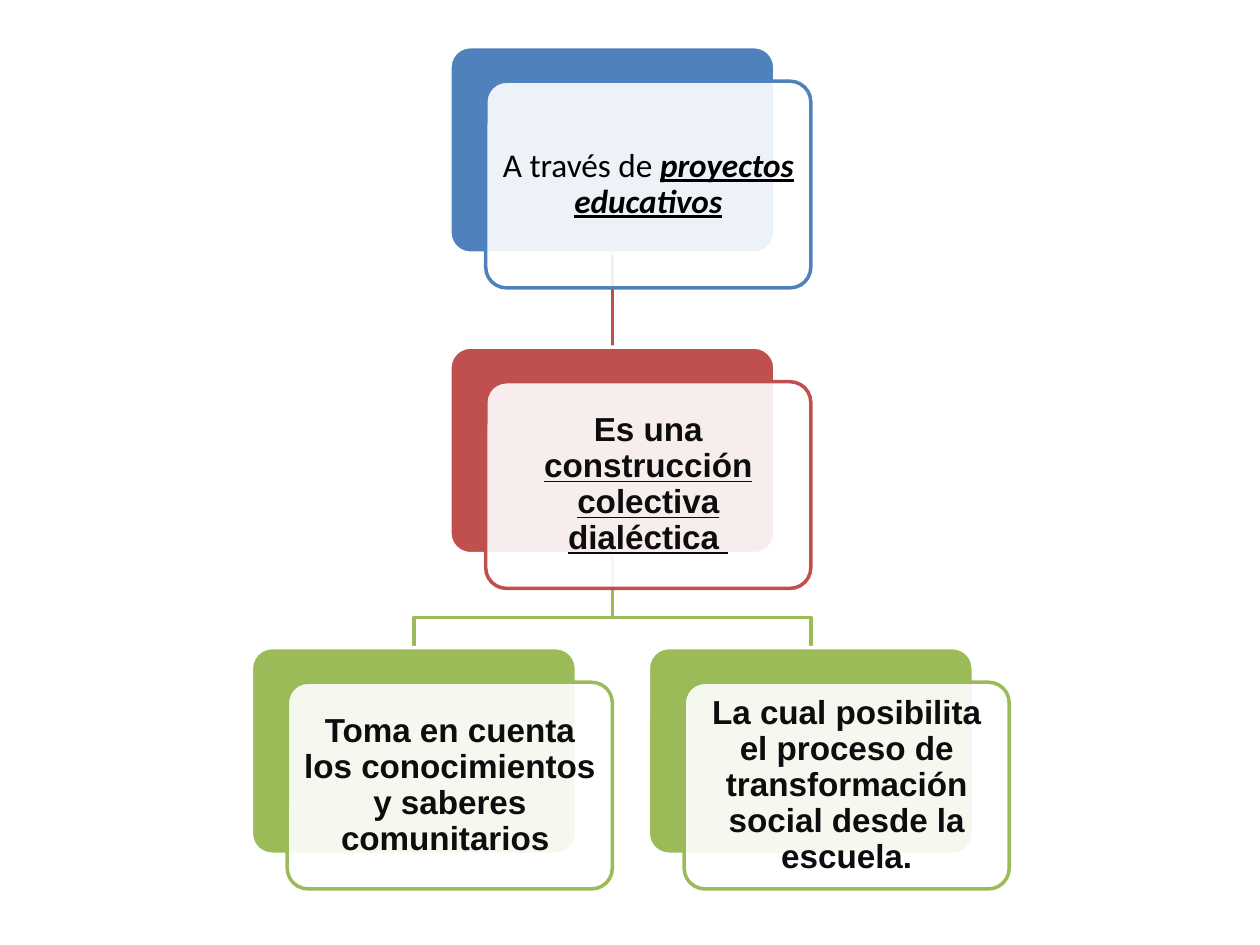
from lxml import etree
from pptx import Presentation, util as u
from pptx.dml.color import RGBColor
from pptx.enum import shapes, text
from pptx.oxml.ns import qn

BLUE = RGBColor(0x4F, 0x81, 0xBD)
RED = RGBColor(0xC0, 0x50, 0x4D)
GREEN = RGBColor(0x9B, 0xBB, 0x59)
WHITE = RGBColor(0xFF, 0xFF, 0xFF)
BLACK = RGBColor(0, 0, 0)
INK = RGBColor(0x0D, 0x0D, 0x0D)

CARD_W, CARD_H = 2.58, 1.64
COLUMN_STEP, ROW_STEP = 1.575, 2.385
LEFT, TOP = 1.995, 0.37
FRONT_DX, FRONT_DY = 0.285, 0.275
TEXT_MARGIN = 0.05
LINE_WIDTH = u.Pt(2)


def card_origin(column, row):
    return LEFT + column * COLUMN_STEP, TOP + row * ROW_STEP


def top_center(column, row):
    x, y = card_origin(column, row)
    return x + CARD_W / 2, y


def bottom_center(column, row):
    x, y = top_center(column, row)
    return x, y + CARD_H


def add_panel(slide, x, y, fill, line, opacity=100):
    panel = slide.shapes.add_shape(
        shapes.MSO_SHAPE.ROUNDED_RECTANGLE,
        u.Inches(x), u.Inches(y), u.Inches(CARD_W), u.Inches(CARD_H))
    panel.adjustments[0] = 0.1
    panel.shadow.inherit = False
    panel.fill.solid()
    panel.fill.fore_color.rgb = fill
    panel.line.color.rgb = line
    panel.line.width = LINE_WIDTH
    if opacity < 100:
        color = panel.fill._xPr.find(qn("a:solidFill"))[0]
        etree.SubElement(color, qn("a:alpha"), val=str(opacity * 1000))


def add_run(paragraph, words, font="Arial", size=19, color=INK,
            bold=True, italic=False, underline=False):
    run = paragraph.add_run()
    run.text = words
    run.font.name = font
    run.font.size = u.Pt(size)
    run.font.color.rgb = color
    run.font.bold = bold
    run.font.italic = italic
    run.font.underline = underline


def add_card(slide, column, row, color, runs):
    """Draw a coloured panel, a translucent panel in front, and its text."""
    x, y = card_origin(column, row)
    add_panel(slide, x, y, color, WHITE)
    x, y = x + FRONT_DX, y + FRONT_DY
    add_panel(slide, x, y, WHITE, color, opacity=90)

    label = slide.shapes.add_textbox(
        u.Inches(x + TEXT_MARGIN), u.Inches(y + TEXT_MARGIN),
        u.Inches(CARD_W - 2 * TEXT_MARGIN), u.Inches(CARD_H - 2 * TEXT_MARGIN))
    frame = label.text_frame
    frame.word_wrap = True
    frame.vertical_anchor = text.MSO_ANCHOR.MIDDLE
    frame.margin_left = frame.margin_right = u.Inches(0.08)
    frame.margin_top = frame.margin_bottom = u.Inches(0.08)
    paragraph = frame.paragraphs[0]
    paragraph.alignment = text.PP_ALIGN.CENTER
    paragraph.line_spacing = 0.9
    for words, style in runs:
        add_run(paragraph, words, **style)


def add_branch(slide, parent, child, color):
    """Draw a bent line from the parent card down to the child card."""
    x1, y1 = bottom_center(*parent)
    x2, y2 = top_center(*child)
    bend = y1 + (y2 - y1) * 0.68
    points = [(u.Inches(x), u.Inches(y))
              for x, y in ((x1, y1), (x1, bend), (x2, bend), (x2, y2))]
    builder = slide.shapes.build_freeform(*points[0])
    builder.add_line_segments(points[1:], close=False)
    branch = builder.convert_to_shape()
    branch.shadow.inherit = False
    branch.fill.background()
    branch.line.color.rgb = color
    branch.line.width = LINE_WIDTH


def add_stem(slide, parent, child, color):
    ends = [u.Inches(v) for v in bottom_center(*parent) + top_center(*child)]
    stem = slide.shapes.add_connector(shapes.MSO_CONNECTOR.STRAIGHT, *ends)
    stem.line.color.rgb = color
    stem.line.width = LINE_WIDTH
    etree.SubElement(stem._element.spPr, qn("a:effectLst"))


def main():
    deck = Presentation()
    deck.slide_width, deck.slide_height = u.Inches(10), u.Inches(7.5)
    slide = deck.slides.add_slide(deck.slide_layouts[6])

    projects, construction = (1, 0), (1, 1)
    knowledge, transformation = (0, 2), (2, 2)
    for child in (transformation, knowledge):
        add_branch(slide, construction, child, GREEN)
    add_stem(slide, projects, construction, RED)

    calibri = dict(font="Calibri", color=BLACK)
    add_card(slide, *projects, BLUE, [
        ("A través de ", dict(calibri, bold=False)),
        ("proyectos educativos", dict(calibri, italic=True, underline=True))])
    add_card(slide, *construction, RED, [
        ("Es una ", {}),
        ("construcción colectiva dialéctica ", dict(underline=True))])
    add_card(slide, *knowledge, GREEN, [
        ("Toma en cuenta los conocimientos y saberes comunitarios ", {})])
    add_card(slide, *transformation, GREEN, [
        ("La cual posibilita el proceso de transformación social "
         "desde la escuela.", {})])
    deck.save("out.pptx")


if __name__ == "__main__":
    main()
